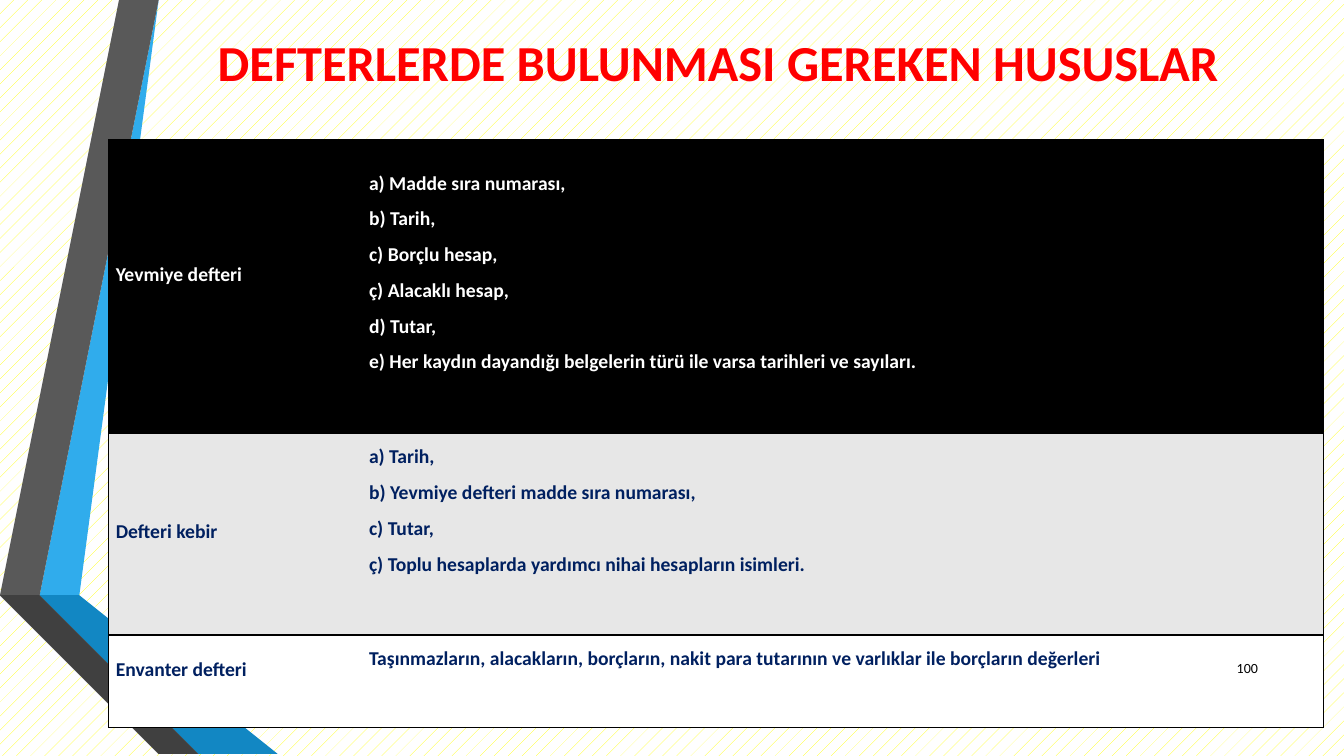
from dataclasses import dataclass

from lxml import etree
from pptx import Presentation
from pptx import util as u
from pptx.dml.color import RGBColor
from pptx.enum import dml, text
from pptx.oxml.ns import qn


@dataclass(frozen=True)
class Theme:
    font: str = "Calibri"
    title: int = 36
    body: int = 14
    page: int = 10
    red: str = "FF0000"
    navy: str = "002060"
    black: str = "000000"
    white: str = "FFFFFF"
    gray: str = "E7E7E7"
    yellow: str = "FFFF00"


FULL, RIGHT, MID = text.PP_ALIGN.JUSTIFY, text.PP_ALIGN.RIGHT, text.PP_ALIGN.CENTER
CENTER, TOP = text.MSO_ANCHOR.MIDDLE, text.MSO_ANCHOR.TOP


def apply(obj, **values):
    for name, value in values.items():
        setattr(obj, name, value)


class Page:
    def __init__(self, deck, theme):
        self.theme = theme
        self.slide = deck.slides.add_slide(deck.slide_layouts[5])

    def back(self, fore, base):
        fill = self.slide.background.fill
        fill.patterned()
        fill.pattern = dml.MSO_PATTERN.PERCENT_5
        fill.fore_color.rgb = RGBColor.from_string(fore)
        fill.back_color.rgb = RGBColor.from_string(base)

    def prose(self, frame, lines, size, color, bold=True, **form):
        frame.text = "\n".join(lines)
        for para in frame.paragraphs:
            apply(para, **form)
            for run in para.runs:
                apply(run.font, name=self.theme.font, size=u.Pt(size), bold=bold)
                run.font.color.rgb = RGBColor.from_string(color)

    def title(self, words, box):
        shape = self.slide.shapes.title
        apply(shape, **dict(zip(("left", "top", "width", "height"), map(u.Cm, box))))
        apply(shape.text_frame, vertical_anchor=CENTER, word_wrap=True)
        self.prose(shape.text_frame, [words], self.theme.title, self.theme.red,
                   alignment=MID)

    def label(self, words, box):
        frame = self.slide.shapes.add_textbox(*map(u.Cm, box)).text_frame
        apply(frame, vertical_anchor=CENTER, word_wrap=True)
        self.prose(frame, [words], self.theme.page, self.theme.black, bold=False,
                   alignment=RIGHT)

    def band(self, color, points):
        pen = self.slide.shapes.build_freeform(*points[0], scale=u.Cm(1))
        pen.add_line_segments(points[1:], close=True)
        shape = pen.convert_to_shape()
        shape.shadow.inherit = False
        shape.fill.solid()
        shape.fill.fore_color.rgb = RGBColor.from_string(color)
        shape.line.fill.background()

    def edge(self, cell, sides):
        props = cell._tc.get_or_add_tcPr()
        for side in "LRTB":
            line = etree.SubElement(props, qn(f"a:ln{side}"), w=str(u.Pt(1)))
            if side in sides:
                fill = etree.SubElement(line, qn("a:solidFill"))
                etree.SubElement(fill, qn("a:srgbClr"), val=self.theme.black)
            else:
                etree.SubElement(line, qn("a:noFill"))

    def cell(self, cell, lines, ink, fill, sides, anchor, pad, **form):
        self.edge(cell, sides)
        cell.fill.solid()
        cell.fill.fore_color.rgb = RGBColor.from_string(fill)
        apply(cell, vertical_anchor=anchor, margin_left=u.Cm(0.18),
              margin_right=u.Cm(0.18), margin_top=u.Cm(pad[0]),
              margin_bottom=u.Cm(pad[1]))
        self.prose(cell.text_frame, lines, self.theme.body, ink, **form)

    def table(self, rows, spot, widths):
        size = sum(widths), sum(row["high"] for row in rows)
        table = self.slide.shapes.add_table(
            len(rows), len(widths), *map(u.Cm, spot + size)).table
        apply(table, first_row=False, horz_banding=False)
        for col, width in zip(table.columns, widths):
            col.width = u.Cm(width)
        for i, row in enumerate(rows):
            table.rows[i].height = u.Cm(row["high"])
            look = row["ink"], row["fill"]
            self.cell(table.cell(i, 0), [row["name"]], *look, "LTB", CENTER,
                      (0, row["lift"]), line_spacing=u.Pt(14))
            self.cell(table.cell(i, 1), row["items"], *look, "RTB", TOP,
                      (row["drop"], 0), line_spacing=1.5, alignment=FULL)


# Ribbon outlines in centimetres
BANDS = [
    ("30ACEC", [(1.27, 14.68), (1.96, 14.81), (4.39, 0), (3.68, 0)]),
    ("595959", [(3.53, 0), (2.82, 0), (0.41, 14.55), (1.12, 14.66)]),
    ("262626", [(0.41, 14.55), (3.68, 19.05), (3.84, 19.05)]),
    ("0C5A82", [(1.27, 14.71), (5.28, 19.05), (5.44, 19.05)]),
    ("1287C3", [(1.27, 14.68), (5.44, 19.05), (7.19, 19.05), (1.96, 14.81)]),
    ("404040", [(5.13, 19.05), (1.22, 14.81), (1.09, 14.66), (0.41, 14.55),
                (3.84, 19.05)]),
]


def main():
    theme = Theme()
    deck = Presentation()
    apply(deck, slide_width=u.Cm(33.87), slide_height=u.Cm(19.05))
    page = Page(deck, theme)

    # Background and ribbons
    page.back(theme.yellow, theme.white)
    for color, points in BANDS:
        page.band(color, points)

    # Title
    page.title("DEFTERLERDE BULUNMASI GEREKEN HUSUSLAR", (4.19, 0.74, 27.84, 1.6))

    # Ledger table
    rows = [
        dict(name="Yevmiye defteri", high=7.39, ink=theme.white, fill=theme.black,
             lift=0.49, drop=0.49, items=[
                 "a) Madde sıra numarası,", "b) Tarih,", "c) Borçlu hesap,",
                 "ç) Alacaklı hesap,", "d) Tutar,",
                 "e) Her kaydın dayandığı belgelerin türü ile varsa tarihleri"
                 " ve sayıları."]),
        dict(name="Defteri kebir", high=5.08, ink=theme.navy, fill=theme.gray,
             lift=0, drop=0, items=[
                 "a) Tarih,", "b) Yevmiye defteri madde sıra numarası,", "c) Tutar,",
                 "ç) Toplu hesaplarda yardımcı nihai hesapların isimleri."]),
        dict(name="Envanter defteri", high=2.34, ink=theme.navy, fill=theme.white,
             lift=0.49, drop=0, items=[
                 "Taşınmazların, alacakların, borçların, nakit para tutarının"
                 " ve varlıklar ile borçların değerleri"]),
    ]
    page.table(rows, (2.74, 3.53), (6.38, 24.23))

    # Page number
    page.label("100", (30.43, 16.31, 1.52, 1.02))
    deck.save("out.pptx")


if __name__ == "__main__":
    main()
